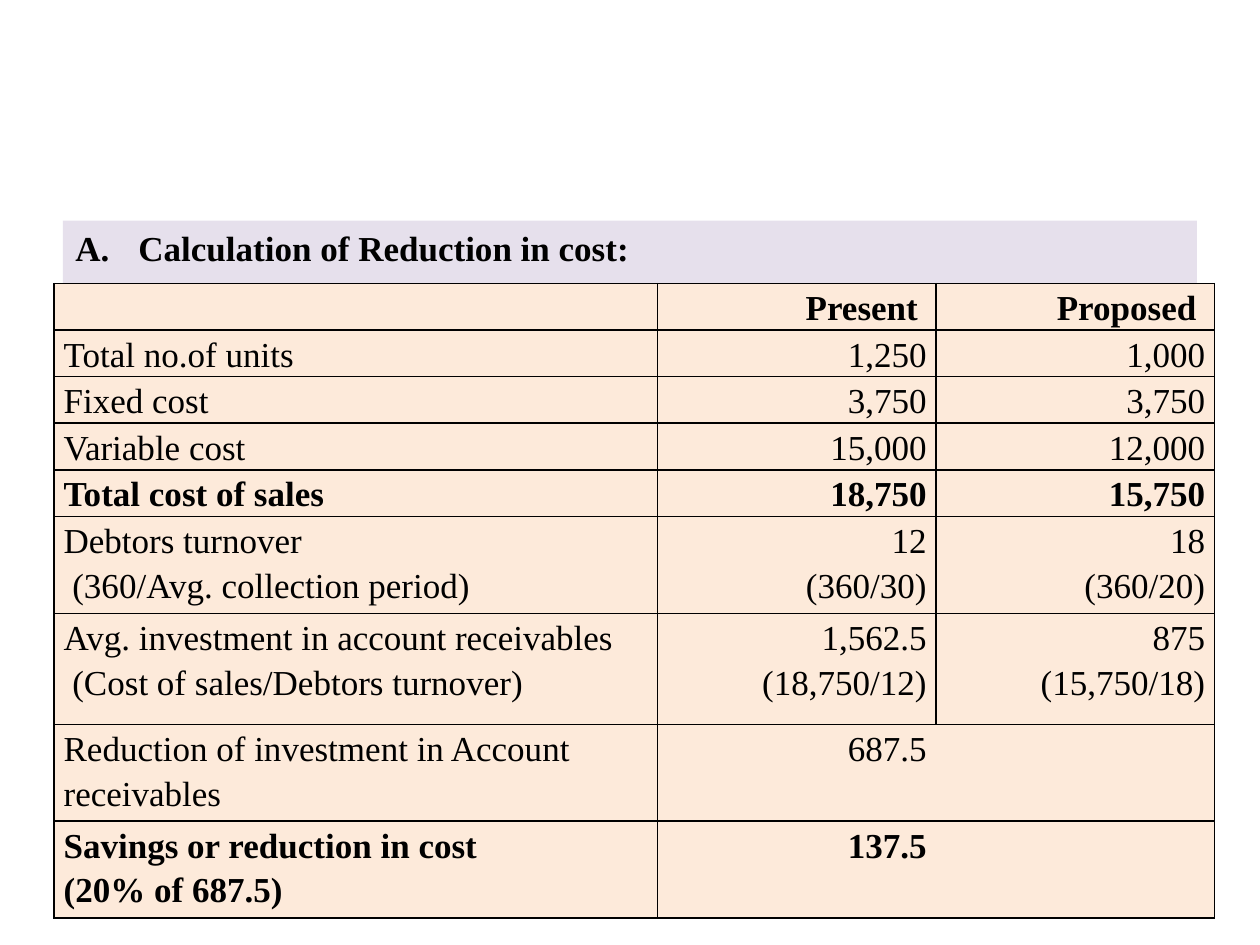
from dataclasses import dataclass

from lxml.etree import SubElement
from pptx import Presentation
from pptx.dml.color import RGBColor
from pptx.enum.shapes import MSO_SHAPE as Shape
from pptx.enum.text import MSO_ANCHOR as Anchor, PP_ALIGN as Align
from pptx.oxml.ns import qn
from pptx.util import Inches, Pt


@dataclass(frozen=True)
class Theme:
    font: str = "Times New Roman"
    size: int = 20
    ink: str = "000000"
    heading_fill: str = "E6E0EC"
    table_fill: str = "FDEADA"
    border: int = 1
    line_spacing: float = 1.15


class CostSlide:
    COLUMNS, ROWS = 100, 75

    def __init__(self, deck, theme):
        self.theme = theme
        self.slide = deck.slides.add_slide(deck.slide_layouts[6])
        self.column = deck.slide_width / self.COLUMNS
        self.row = deck.slide_height / self.ROWS

    def across(self, columns):
        return round(columns * self.column)

    def down(self, rows):
        return round(rows * self.row)

    def box(self, left, top, width, height):
        return self.across(left), self.down(top), self.across(width), self.down(height)

    def paint(self, target, color):
        target.fill.solid()
        target.fill.fore_color.rgb = RGBColor.from_string(color)

    def style(self, paragraph, align, bold):
        paragraph.alignment = align
        font = paragraph.font
        font.name, font.size, font.bold = self.theme.font, Pt(self.theme.size), bold
        font.color.rgb = RGBColor.from_string(self.theme.ink)

    def heading(self, text, area, hanging):
        panel = self.slide.shapes.add_shape(Shape.RECTANGLE, *self.box(*area))
        panel.shadow.inherit = False
        panel.line.fill.background()
        self.paint(panel, self.theme.heading_fill)
        panel.text_frame.vertical_anchor = Anchor.TOP
        title = panel.text_frame.paragraphs[0]
        title.text = text
        title.space_before = Pt(self.theme.size * 0.2)
        self.style(title, Align.LEFT, True)
        properties = title._p.get_or_add_pPr()
        indent = self.across(hanging)
        properties.set("marL", str(indent))
        properties.set("indent", str(-indent))
        numbering = properties.makeelement(qn("a:buAutoNum"), {"type": "alphaUcPeriod"})
        properties.find(qn("a:defRPr")).addprevious(numbering)

    def borders(self, cell, hidden):
        properties = cell._tc.get_or_add_tcPr()
        for side in "LRTB":
            line = SubElement(properties, qn(f"a:ln{side}"), w=str(Pt(self.theme.border)))
            if side == hidden:
                SubElement(line, qn("a:noFill"))
            else:
                fill = SubElement(line, qn("a:solidFill"))
                SubElement(fill, qn("a:srgbClr"), val=self.theme.ink)

    def cell(self, cell, text, align, bold, hidden):
        cell.margin_left = cell.margin_right = self.across(0.75)
        cell.margin_top = cell.margin_bottom = 0
        cell.text = text
        for paragraph in cell.text_frame.paragraphs:
            self.style(paragraph, align, bold)
            paragraph.line_spacing = self.theme.line_spacing
        self.borders(cell, hidden)
        self.paint(cell, self.theme.table_fill)

    def table(self, entries, origin, widths, bold_rows):
        heights = [height for height, *_ in entries]
        area = (*origin, sum(widths), sum(heights))
        table = self.slide.shapes.add_table(len(entries), len(widths), *self.box(*area)).table
        table.first_row = table.horz_banding = False
        for column, width in zip(table.columns, widths):
            column.width = self.across(width)
        for index, (height, *texts) in enumerate(entries):
            table.rows[index].height = self.down(height)
            open_row = index > 0 and not texts[-1]
            for position, text in enumerate(texts):
                align = Align.RIGHT if position else Align.LEFT
                hidden = ("", "R", "L")[position] if open_row else ""
                self.cell(table.cell(index, position), text, align, index in bold_rows, hidden)


SINGLE, DOUBLE, TALL = 3.7, 7.7, 8.8
COSTS = [
    (SINGLE, "", "Present ", "Proposed "),
    (SINGLE, "Total no.of units", "1,250", "1,000"),
    (SINGLE, "Fixed cost", "3,750", "3,750"),
    (SINGLE, "Variable cost", "15,000", "12,000"),
    (SINGLE, "Total cost of sales", "18,750", "15,750"),
    (DOUBLE, "Debtors turnover\n (360/Avg. collection period)", "12\n(360/30)", "18\n(360/20)"),
    (TALL, "Avg. investment in account receivables\n (Cost of sales/Debtors turnover)",
     "1,562.5\n(18,750/12)", "875\n(15,750/18)"),
    (DOUBLE, "Reduction of investment in Account receivables", "687.5", ""),
    (DOUBLE, "Savings or reduction in cost\n(20% of 687.5)", "137.5", ""),
]


def main():
    deck = Presentation()
    deck.slide_width, deck.slide_height = Inches(10), Inches(7.5)
    page = CostSlide(deck, Theme())
    page.heading("Calculation of Reduction in cost:", (5, 17.5, 90, 49.5), 5)
    page.table(COSTS, (4.3, 22.5), (47.9, 22.1, 22.1), {0, 4, len(COSTS) - 1})
    deck.save("out.pptx")


if __name__ == "__main__":
    main()
